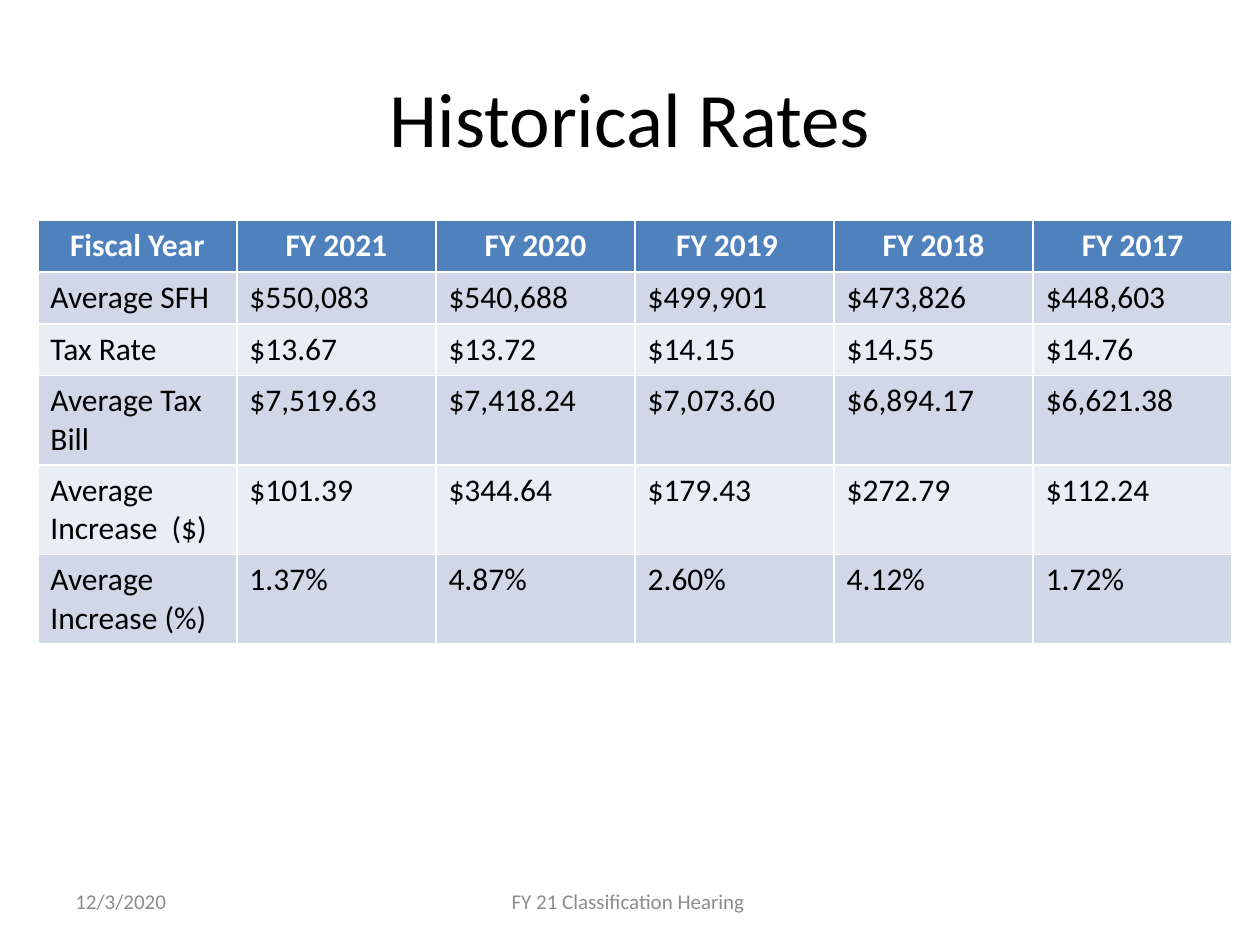
from dataclasses import dataclass

from pptx import Presentation
from pptx.dml.color import RGBColor
from pptx.enum.text import MSO_ANCHOR, PP_ALIGN as Align
from pptx.util import Inches, Pt


@dataclass(frozen=True)
class Theme:
    font: str = "Calibri"
    black: RGBColor = RGBColor(0x00, 0x00, 0x00)
    white: RGBColor = RGBColor(0xFF, 0xFF, 0xFF)
    gray: RGBColor = RGBColor(0x8C, 0x8C, 0x8C)
    header: RGBColor = RGBColor(0x4F, 0x81, 0xBD)
    bands: tuple = (RGBColor(0xD0, 0xD8, 0xE8), RGBColor(0xE9, 0xED, 0xF4))
    title_size: int = 44
    table_size: int = 18
    footer_size: int = 12


@dataclass(frozen=True)
class Footer:
    text: str
    left: float
    width: float
    align: Align


THEME = Theme()
LINE_ROW, WRAPPED_ROW = 0.41, 0.71
COLUMN_WIDTH = 1.58

RATES = [
    ("Fiscal Year", "FY 2021", "FY 2020", "FY 2019", "FY 2018", "FY 2017"),
    ("Average SFH", "$550,083", "$540,688", "$499,901", "$473,826", "$448,603"),
    ("Tax Rate", "$13.67", "$13.72", "$14.15", "$14.55", "$14.76"),
    ("Average Tax Bill", "$7,519.63", "$7,418.24", "$7,073.60", "$6,894.17", "$6,621.38"),
    ("Average Increase  ($)", "$101.39", "$344.64", "$179.43", "$272.79", "$112.24"),
    ("Average Increase (%)", "1.37%", "4.87%", "2.60%", "4.12%", "1.72%"),
]
ROW_HEIGHTS = [LINE_ROW] * 3 + [WRAPPED_ROW] * 3

FOOTERS = [
    Footer("12/3/2020", 0.5, 2.33, Align.LEFT),
    Footer("FY 21 Classification Hearing", 3.4, 3.17, Align.CENTER),
]


def write(frame, text: str, size: int, color: RGBColor, align: Align, bold: bool = False) -> None:
    frame.text = text
    paragraph = frame.paragraphs[0]
    paragraph.alignment = align
    font = paragraph.font
    font.name, font.size, font.bold = THEME.font, Pt(size), bold
    font.color.rgb = color


def add_title(slide, text: str) -> None:
    title = slide.shapes.title
    title.left, title.top = Inches(0.5), Inches(0.3)
    title.width, title.height = Inches(9), Inches(1.25)
    title.text_frame.vertical_anchor = MSO_ANCHOR.MIDDLE
    write(title.text_frame, text, THEME.title_size, THEME.black, Align.CENTER)


def add_rates(slide) -> None:
    columns = len(RATES[0])
    table = slide.shapes.add_table(
        len(RATES), columns, Inches(0.3), Inches(1.75),
        Inches(COLUMN_WIDTH * columns), Inches(sum(ROW_HEIGHTS)),
    ).table
    for column in table.columns:
        column.width = Inches(COLUMN_WIDTH)
    for r, (values, height) in enumerate(zip(RATES, ROW_HEIGHTS)):
        table.rows[r].height = Inches(height)
        is_header = r == 0
        for c, value in enumerate(values):
            cell = table.cell(r, c)
            cell.fill.solid()
            cell.fill.fore_color.rgb = THEME.header if is_header else THEME.bands[(r - 1) % 2]
            write(cell.text_frame, value, THEME.table_size,
                  THEME.white if is_header else THEME.black,
                  Align.CENTER if is_header else Align.LEFT, bold=is_header)
    # The FY 2019 heading sits slightly left of centre
    table.cell(0, RATES[0].index("FY 2019")).margin_right = Inches(0.22)


def add_footer(slide, footer: Footer) -> None:
    box = slide.shapes.add_textbox(
        Inches(footer.left), Inches(6.95), Inches(footer.width), Inches(0.4))
    box.text_frame.word_wrap = True
    box.text_frame.vertical_anchor = MSO_ANCHOR.MIDDLE
    write(box.text_frame, footer.text, THEME.footer_size, THEME.gray, footer.align)


def main() -> None:
    deck = Presentation()
    deck.slide_width, deck.slide_height = Inches(10), Inches(7.5)
    slide = deck.slides.add_slide(deck.slide_layouts.get_by_name("Title Only"))

    # Title
    add_title(slide, "Historical Rates")
    # Table of rates by fiscal year
    add_rates(slide)
    # Date and hearing name
    for footer in FOOTERS:
        add_footer(slide, footer)

    deck.save("out.pptx")


if __name__ == "__main__":
    main()
